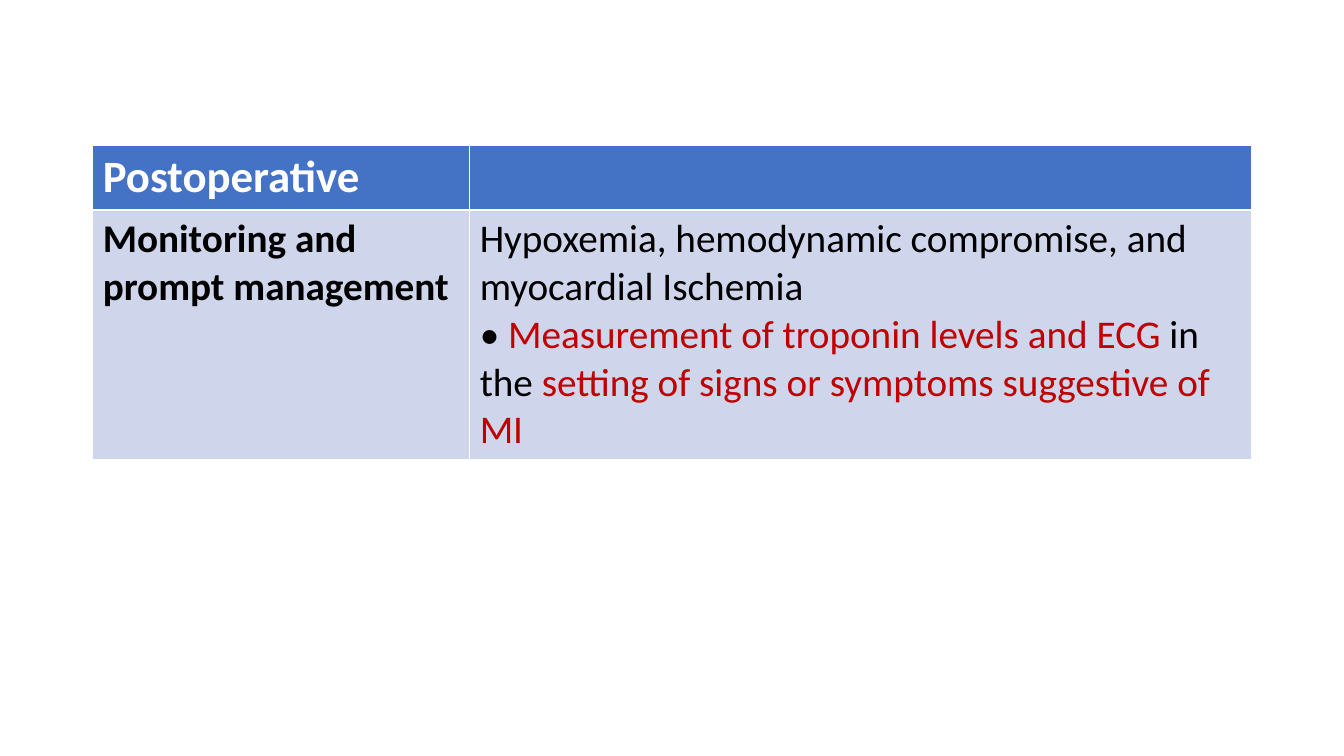
"""Build a slide with a table on postoperative monitoring."""
from dataclasses import dataclass

from pptx import Presentation
from pptx.dml.color import RGBColor as RGB
from pptx.table import _Cell as Cell
from pptx.util import Inches, Pt

WIDE, HIGH = Inches(13.33), Inches(7.5)
HUES = {"head": "4472C4", "body": "CFD5EA", "white": "FFFFFF",
        "black": "000000", "red": "C00000"}
LEFT, TOP = 0.069, 0.192
COLS = (0.2805, 0.582)
ROWS = (0.085, 0.324)


@dataclass
class Part:
    text: str
    hue: str = "black"


@dataclass
class Entry:
    row: int
    col: int
    fill: str
    lines: list[list[Part]]
    size: int = 28
    bold: bool = False


ENTRIES = [
    Entry(0, 0, "head", [[Part("Postoperative", "white")]], 32, True),
    Entry(0, 1, "head", []),
    Entry(1, 0, "body", [[Part("Monitoring and prompt management")]], bold=True),
    Entry(1, 1, "body", [
        [Part("Hypoxemia, hemodynamic compromise, and")],
        [Part("myocardial Ischemia")],
        [Part("• "), Part("Measurement of troponin levels and ECG ", "red"),
         Part("in")],
        [Part("the "), Part("setting of signs or symptoms suggestive of", "red")],
        [Part("MI", "red")],
    ]),
]


def color(name: str) -> RGB:
    return RGB.from_string(HUES[name])


def write(cell: Cell, entry: Entry) -> None:
    cell.fill.solid()
    cell.fill.fore_color.rgb = color(entry.fill)
    frame = cell.text_frame
    frame.text = "\n".join("" for _ in entry.lines)
    for para, parts in zip(frame.paragraphs, entry.lines):
        for part in parts:
            run = para.add_run()
            run.text = part.text
            font = run.font
            font.name, font.size, font.bold = "Calibri", Pt(entry.size), entry.bold
            font.color.rgb = color(part.hue)


def main() -> None:
    deck = Presentation()
    deck.slide_width, deck.slide_height = WIDE, HIGH
    slide = deck.slides.add_slide(deck.slide_layouts[6])
    table = slide.shapes.add_table(
        len(ROWS), len(COLS), int(LEFT * WIDE), int(TOP * HIGH),
        int(sum(COLS) * WIDE), int(sum(ROWS) * HIGH)).table
    table.horz_banding = False
    for col, share in zip(table.columns, COLS):
        col.width = int(share * WIDE)
    for row, share in zip(table.rows, ROWS):
        row.height = int(share * HIGH)
    for entry in ENTRIES:
        write(table.cell(entry.row, entry.col), entry)
    deck.save("out.pptx")


if __name__ == "__main__":
    main()
